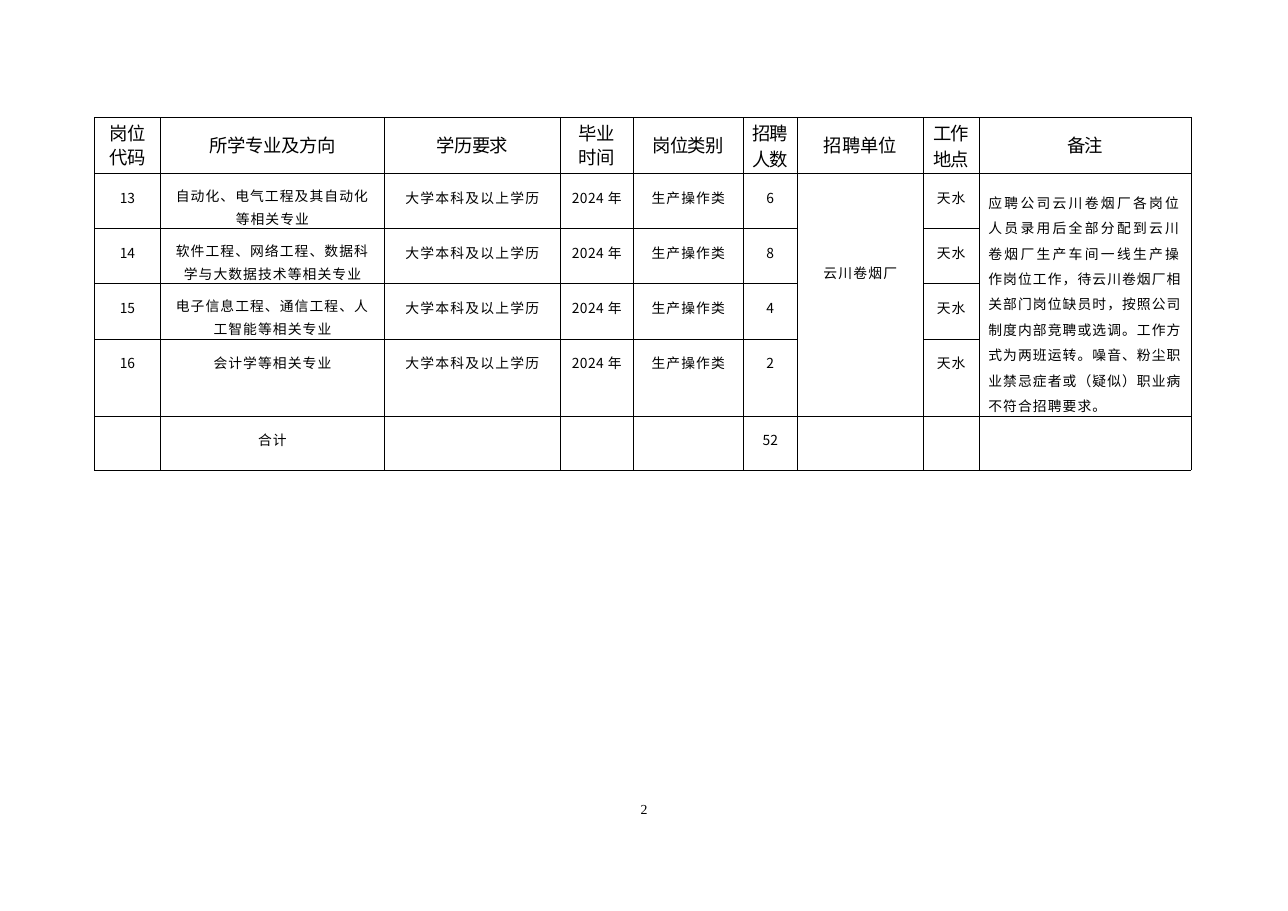
import pptx
import pptx.dml.color
import pptx.enum.text
import pptx.oxml
import pptx.oxml.ns
import pptx.util

Pt = pptx.util.Pt
ALIGN = pptx.enum.text.PP_ALIGN
ANCHOR = pptx.enum.text.MSO_ANCHOR
BLACK = pptx.dml.color.RGBColor(0, 0, 0)
SANS = "Noto Sans CJK SC"
SERIF = "Times New Roman"

COLUMN_WIDTHS = [43.1, 146.4, 115, 47.7, 71.9, 35.3, 82.3, 36.6, 138.5]
ROW_HEIGHTS = [36.6, 36, 36, 36.2, 50.3, 35.3]
HEADERS = [
    ("岗位\n代码", -0.5, 15.7),
    ("所学专业及方向", -0.2, 15.7),
    ("学历要求", -0.3, 15.7),
    ("毕业\n时间", -0.4, 15.7),
    ("岗位类别", -0.3, 15.7),
    ("招聘\n人数", -0.6, 17),
    ("招聘单位", -0.2, 15.7),
    ("工作\n地点", -0.5, 17),
    ("备注", -0.3, 15.7),
]
POSTS = [
    ("13", "自动化、电气工程及其自动化等相关专业", "6"),
    ("14", "软件工程、网络工程、数据科学与大数据技术等相关专业", "8"),
    ("15", "电子信息工程、通信工程、人工智能等相关专业", "4"),
    ("16", "会计学等相关专业", "2"),
]
EMPLOYER = "云川卷烟厂"
NOTE = [
    ("应聘公司云川卷烟厂各岗位人员录用后全部分配到云川卷烟厂生产车间一线生产操", 1.5),
    ("作岗位工作，待云川卷烟厂相关部门岗位缺员时，按照公司制度内部竞聘或选调。"
     "工作方式为两班运转。噪音、粉尘职业禁忌症者或（疑似）职业病不符合招聘要求。", 0.7),
]


def add_run(paragraph, text, size, spacing, font_name):
    """Add one black run with the given letter spacing in points."""
    run = paragraph.add_run()
    run.text = text
    run.font.size = Pt(size)
    run.font.name = font_name
    run.font.color.rgb = BLACK
    properties = run._r.get_or_add_rPr()
    properties.set("spc", str(round(spacing * 100)))
    east_asian = pptx.oxml.parse_xml(
        f'<a:ea {pptx.oxml.ns.nsdecls("a")} typeface="{font_name}"/>')
    properties.find(pptx.oxml.ns.qn("a:latin")).addnext(east_asian)


def style_cell(cell):
    """Give a cell thin black borders, no fill and no margins."""
    cell.fill.background()
    cell.margin_left = cell.margin_right = cell.margin_top = cell.margin_bottom = 0
    properties = cell._tc.get_or_add_tcPr()
    for index, side in enumerate(("lnL", "lnR", "lnT", "lnB")):
        properties.insert(index, pptx.oxml.parse_xml(
            f'<a:{side} {pptx.oxml.ns.nsdecls("a")} w="3175"><a:solidFill>'
            f'<a:srgbClr val="{BLACK}"/></a:solidFill></a:{side}>'))


def fill_cell(cell, runs, line=15, top=7.2, side=0, align=ALIGN.CENTER):
    """Write the runs in one paragraph below the top margin."""
    cell.margin_top = Pt(top)
    cell.margin_left = cell.margin_right = Pt(side)
    paragraph = cell.text_frame.paragraphs[0]
    paragraph.alignment = align
    paragraph.line_spacing = Pt(line)
    for text, spacing in runs:
        add_run(paragraph, text, 9, spacing, SANS)


def fill_header(table):
    """Write the centred column headings."""
    for column, (heading, spacing, line) in enumerate(HEADERS):
        cell = table.cell(0, column)
        cell.vertical_anchor = ANCHOR.MIDDLE
        for index, text in enumerate(heading.split("\n")):
            frame = cell.text_frame
            paragraph = frame.add_paragraph() if index else frame.paragraphs[0]
            paragraph.alignment = ALIGN.CENTER
            paragraph.line_spacing = Pt(line)
            add_run(paragraph, text, 12, spacing, SANS)


def fill_posts(table):
    """Write the post rows, the merged employer and note, and the total."""
    for row, (code, majors, count) in enumerate(POSTS, start=1):
        two_lines = len(majors) > 13
        fill_cell(table.cell(row, 0), [(code, -0.1)])
        fill_cell(table.cell(row, 1), [(majors, 0.7)], top=5.8 if two_lines else 7.2, side=8)
        fill_cell(table.cell(row, 2), [("大学本科及以上学历", 0.8)])
        fill_cell(table.cell(row, 3), [("2024 年", 0.3)])
        fill_cell(table.cell(row, 4), [("生产操作类", 0.7)])
        fill_cell(table.cell(row, 5), [(count, -0.1)])
        fill_cell(table.cell(row, 7), [("天水", 0.6)])
    for column in (6, 8):
        table.cell(1, column).merge(table.cell(len(POSTS), column))
    fill_cell(table.cell(1, 6), [(EMPLOYER, 0.8)], top=56)
    fill_cell(table.cell(1, 8), NOTE, line=16.6, top=8.8, align=ALIGN.LEFT)
    table.cell(1, 8).margin_left = Pt(6)
    total_row = len(POSTS) + 1
    fill_cell(table.cell(total_row, 1), [("合计", 0.5)])
    fill_cell(table.cell(total_row, 5), [("52", 0.1)])


def add_recruitment_table(slide, left, top):
    """Place the recruitment table at the given corner."""
    table = slide.shapes.add_table(
        len(ROW_HEIGHTS), len(COLUMN_WIDTHS), Pt(left), Pt(top),
        Pt(sum(COLUMN_WIDTHS)), Pt(sum(ROW_HEIGHTS))).table
    table.first_row = table.horz_banding = False
    for column, width in zip(table.columns, COLUMN_WIDTHS):
        column.width = Pt(width)
    for row, height in zip(table.rows, ROW_HEIGHTS):
        row.height = Pt(height)
    for cell in table.iter_cells():
        style_cell(cell)
    fill_header(table)
    fill_posts(table)


def add_page_number(slide, left, top, width, height):
    """Place the page number in the given box."""
    shape = slide.shapes.add_textbox(Pt(left), Pt(top), Pt(width), Pt(height))
    frame = shape.text_frame
    frame.margin_left = frame.margin_right = frame.margin_top = frame.margin_bottom = 0
    frame.word_wrap = True
    add_run(frame.paragraphs[0], "2", 9, -0.1, SERIF)


def main():
    """Build the slide and save it."""
    presentation = pptx.Presentation()
    presentation.slide_width = Pt(841.68)
    presentation.slide_height = Pt(595.44)
    slide = presentation.slides.add_slide(presentation.slide_layouts[6])
    add_recruitment_table(slide, 61.7, 76.8)
    add_page_number(slide, 418.6, 523.7, 6.5, 10.1)
    presentation.save("out.pptx")


if __name__ == "__main__":
    main()
